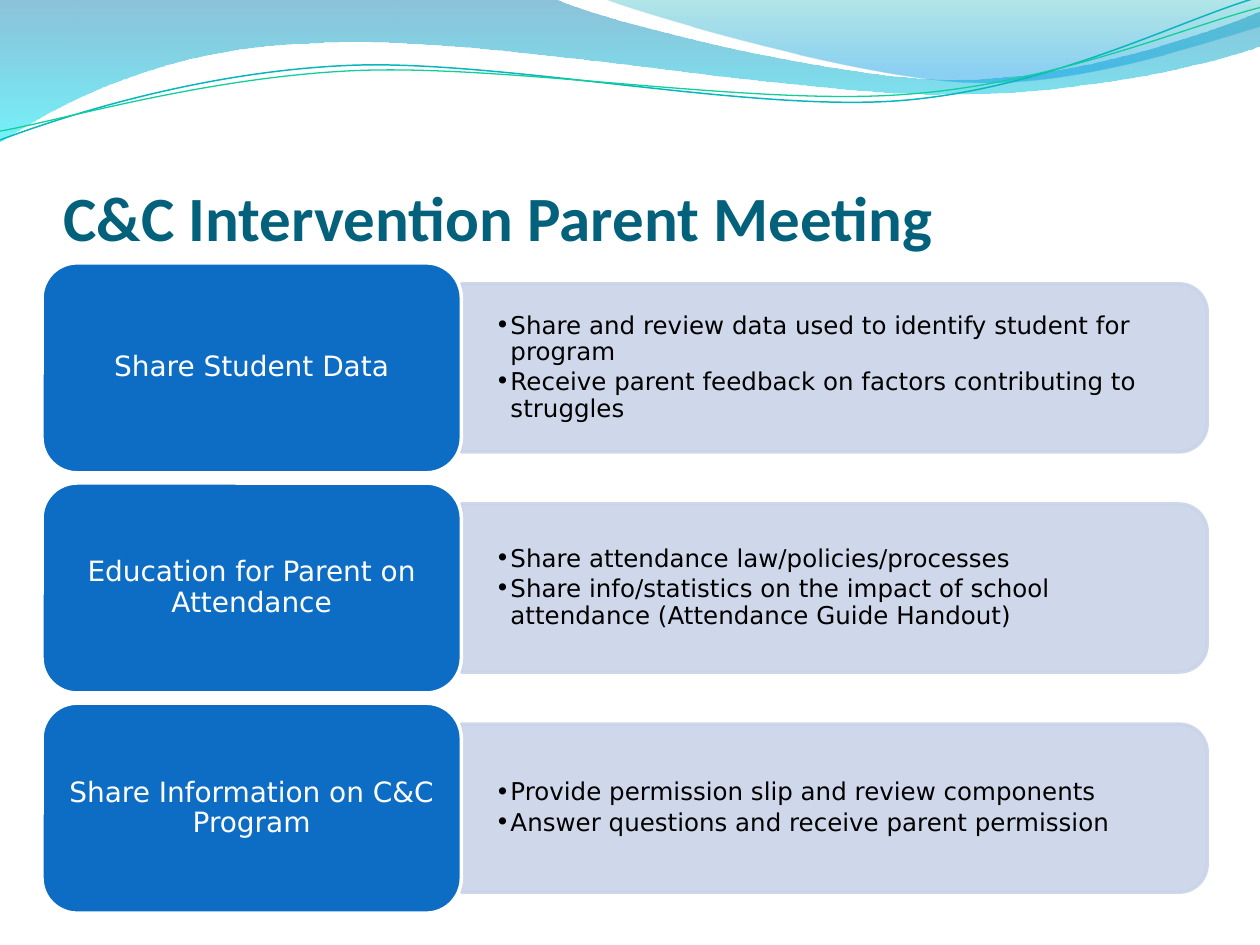
from lxml import etree
from pptx import Presentation
from pptx.dml.color import RGBColor
from pptx.enum import shapes, text
from pptx.oxml.ns import qn
from pptx.util import Pt

WHITE = RGBColor(0xFF, 0xFF, 0xFF)
BLACK = RGBColor(0, 0, 0)
TITLE = RGBColor(0x04, 0x61, 0x7B)
CARD = RGBColor(0x0D, 0x6D, 0xC5)
PANEL = RGBColor(0xCA, 0xD4, 0xE8)
STEEL = RGBColor(0x00, 0x79, 0xAD)
CYAN = RGBColor(0x00, 0xE9, 0xF7)
TEAL = RGBColor(0x00, 0xAB, 0xB4)
SKY = RGBColor(0x00, 0x99, 0xE4)
AQUA = RGBColor(0x09, 0xB6, 0xBE)
GREEN = RGBColor(0x10, 0xCF, 0x9B)

HEADING = "C&C Intervention Parent Meeting"
STEPS = [
    ("Share Student Data", [
        "Share and review data used to identify student for program",
        "Receive parent feedback on factors contributing to struggles"]),
    ("Education for Parent on Attendance", [
        "Share attendance law/policies/processes",
        "Share info/statistics on the impact of school attendance (Attendance Guide Handout)"]),
    ("Share Information on C&C Program", [
        "Provide permission slip and review components",
        "Answer questions and receive parent permission"]),
]

BANDS = [
    ((-0.7, -0.7), [
        [(317, -0.7)], [(343, 12), (478, 45.4), (546, 45.4)],
        [(614, 45.4), (690, 19), (720, 6.5)], [(720.7, 26)],
        [(708, 32), (626, 54.7), (537, 54)], [(448, 54), (275, 20.2), (185, 24.5)],
        [(93, 26), (33, 60), (-0.7, 81.4)]],
     [(0, STEEL, 45), (1, CYAN, 55)]),
    ((345, -0.7), [
        [(366.5, 8), (491, 44.6), (553.7, 46.8)],
        [(616.3, 49.7), (692, 23), (720, 15)], [(720, -0.7)]],
     [(0, TEAL, 30), (0.8, SKY, 45)]),
]
WAVES = [
    ((0, 80), [
        [(34.6, 67), (113.8, 41), (199.4, 37.4)],
        [(284.4, 33.8), (427, 64), (513.4, 57.6)],
        [(599.8, 51), (675.4, 10.8), (718.6, -1.4)]], AQUA, 0.85),
    ((0, 74.9), [
        [(33.8, 69.1), (118, 43.9), (203.8, 40.3)],
        [(290.2, 36.7), (430, 60.5), (516.2, 54)],
        [(602, 48.2), (677.5, 15.1), (720, 4.3)]], GREEN, 0.75),
]

CARD_LEFT, CARD_TOP, CARD_WIDTH, CARD_HEIGHT = 24, 150.2, 239.6, 120
PITCH = 125.8
PANEL_WIDTH, PANEL_HEIGHT = 426.2, 96
TEXT_WIDTH, TEXT_HEIGHT = 421, 86.4
BULLET_INDENT = 8.64


def add_outline(page, start, segments, close):
    builder = page.shapes.build_freeform(Pt(start[0]), Pt(start[1]))
    points = [(Pt(x), Pt(y)) for segment in segments for x, y in segment]
    builder.add_line_segments(points, close=close)
    outline = builder.convert_to_shape()
    outline.shadow.inherit = False
    lines = iter(list(outline._element.spPr.iter(qn("a:lnTo"))))
    for segment in segments:
        members = [next(lines) for _ in segment]
        if len(members) == 3:
            curve = etree.Element(qn("a:cubicBezTo"))
            members[0].addprevious(curve)
            for member in members:
                curve.append(member[0])
                member.getparent().remove(member)
    return outline


def set_opacity(shape, percents):
    for color, percent in zip(shape._element.spPr.iter(qn("a:srgbClr")), percents):
        etree.SubElement(color, qn("a:alpha"), val=str(percent * 1000))


def add_band(page, start, segments, stops):
    band = add_outline(page, start, segments, True)
    band.line.fill.background()
    band.fill.gradient()
    band.fill.gradient_angle = 270
    for stop, (position, color, _) in zip(band.fill.gradient_stops, stops):
        stop.position = position
        stop.color.rgb = color
    set_opacity(band, [opacity for _, _, opacity in stops])


def add_wave(page, start, segments, color, width):
    wave = add_outline(page, start, segments, False)
    wave.fill.background()
    wave.line.color.rgb = color
    wave.line.width = Pt(width)


def add_box(page, kind, left, top, width, height, fill, line, adjustments):
    box = page.shapes.add_shape(kind, Pt(left), Pt(top), Pt(width), Pt(height))
    box.shadow.inherit = False
    box.fill.solid()
    box.fill.fore_color.rgb = fill
    box.line.color.rgb = line
    box.line.width = Pt(2)
    for index, value in enumerate(adjustments):
        box.adjustments[index] = value
    return box


def set_frame(frame, anchor, left, top, right, bottom):
    frame.word_wrap = True
    frame.vertical_anchor = anchor
    frame.margin_left, frame.margin_top = Pt(left), Pt(top)
    frame.margin_right, frame.margin_bottom = Pt(right), Pt(bottom)


def set_font(para, name, size, color, bold=False):
    for span in para.runs:
        span.font.name = name
        span.font.size = Pt(size)
        span.font.color.rgb = color
        span.font.bold = bold


def add_bullet(para):
    props = para._p.get_or_add_pPr()
    props.set("marL", str(Pt(BULLET_INDENT)))
    props.set("indent", str(-Pt(BULLET_INDENT)))
    color = etree.SubElement(props, qn("a:buClr"))
    etree.SubElement(color, qn("a:srgbClr"), val=str(BLACK))
    etree.SubElement(props, qn("a:buFont"), typeface="DejaVu Sans")
    etree.SubElement(props, qn("a:buChar"), char="•")


def add_title(page):
    box = page.shapes.add_textbox(Pt(36.3), Pt(55), Pt(648), Pt(90))
    set_frame(box.text_frame, text.MSO_ANCHOR.BOTTOM, 0, 3.6, 0, 0)
    box.text_frame.text = HEADING
    set_font(box.text_frame.paragraphs[0], "Calibri", 36, TITLE, True)


def add_step(page, top, label, details):
    middle = top + CARD_HEIGHT / 2
    edge = CARD_LEFT + CARD_WIDTH
    panel = add_box(page, shapes.MSO_SHAPE.ROUND_2_SAME_RECTANGLE,
                    edge + (PANEL_WIDTH - PANEL_HEIGHT) / 2, middle - PANEL_WIDTH / 2,
                    PANEL_HEIGHT, PANEL_WIDTH, PANEL, PANEL, (0.167, 0))
    panel.rotation = 90
    set_opacity(panel, (90, 90))

    box = page.shapes.add_textbox(Pt(edge), Pt(middle - TEXT_HEIGHT / 2),
                                  Pt(TEXT_WIDTH), Pt(TEXT_HEIGHT))
    set_frame(box.text_frame, text.MSO_ANCHOR.MIDDLE, 19.5, 10, 19.5, 10)
    box.text_frame.text = "\n".join(details)
    for index, para in enumerate(box.text_frame.paragraphs):
        add_bullet(para)
        para.level = 1
        para.line_spacing = 0.9
        if index:
            para.space_before = Pt(2.1)
        set_font(para, "DejaVu Sans", 14, BLACK)

    card = add_box(page, shapes.MSO_SHAPE.ROUNDED_RECTANGLE, CARD_LEFT, top,
                   CARD_WIDTH, CARD_HEIGHT, CARD, WHITE, (0.167,))
    set_frame(card.text_frame, text.MSO_ANCHOR.MIDDLE, 5, 2.4, 5, 2.4)
    card.text_frame.text = label
    para = card.text_frame.paragraphs[0]
    para.alignment = text.PP_ALIGN.CENTER
    para.line_spacing = 0.9
    set_font(para, "DejaVu Sans", 16, WHITE)


def main():
    deck = Presentation()
    deck.slide_width, deck.slide_height = Pt(720), Pt(540)
    page = deck.slides.add_slide(deck.slide_layouts[6])
    for band in BANDS:
        add_band(page, *band)
    for wave in WAVES:
        add_wave(page, *wave)
    add_title(page)
    for index, (label, details) in enumerate(STEPS):
        add_step(page, CARD_TOP + index * PITCH, label, details)
    deck.save("out.pptx")


if __name__ == "__main__":
    main()
